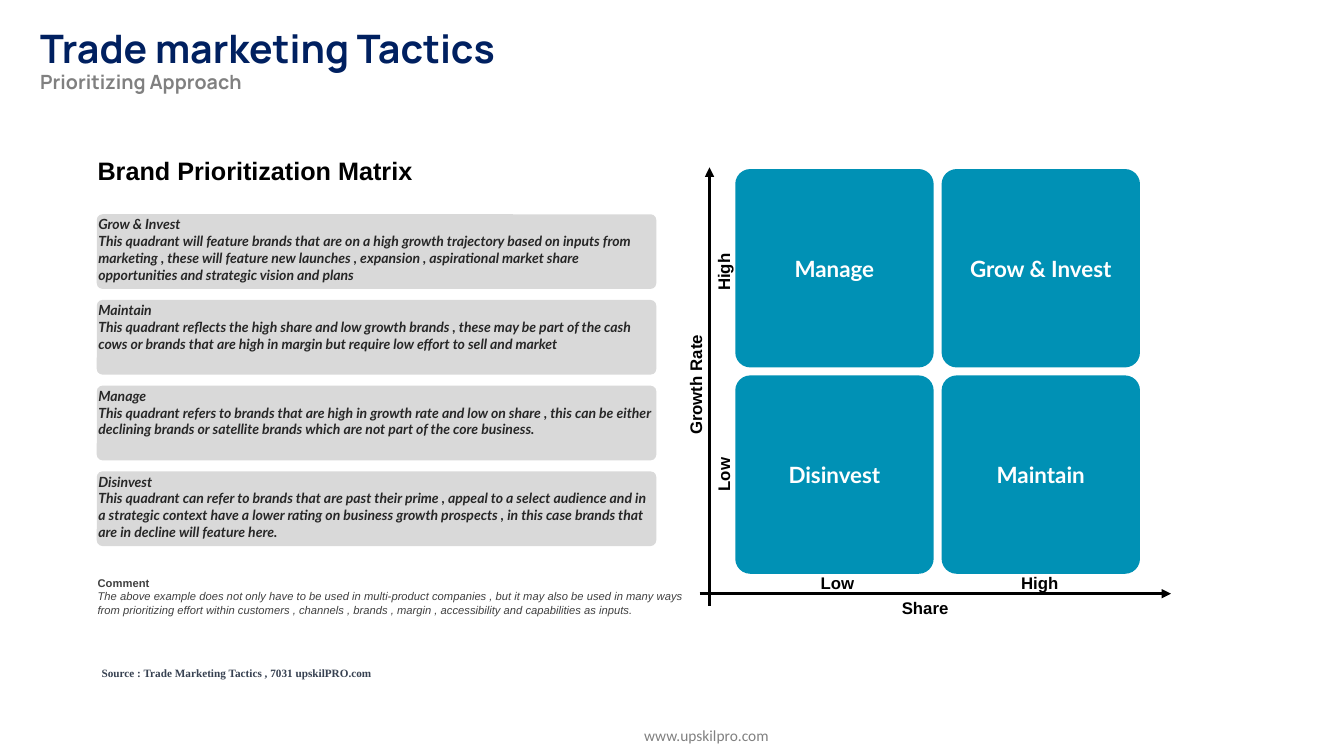
"""Build the brand prioritization matrix slide."""
from lxml import etree
from pptx import Presentation
from pptx.dml.color import RGBColor
from pptx.enum.shapes import MSO_CONNECTOR, MSO_SHAPE
from pptx.enum.text import MSO_ANCHOR, PP_ALIGN
from pptx.oxml.ns import qn
from pptx.util import Cm, Pt

ROUNDED = MSO_SHAPE.ROUNDED_RECTANGLE
STRAIGHT = MSO_CONNECTOR.STRAIGHT
LEFT, CENTER = PP_ALIGN.LEFT, PP_ALIGN.CENTER
TOP, MIDDLE = MSO_ANCHOR.TOP, MSO_ANCHOR.MIDDLE

QUADRANTS = [
    ("Grow & Invest", "This quadrant will feature brands that are on a high growth trajectory "
     "based on inputs from marketing , these will feature new launches , expansion , "
     "aspirational market share opportunities and strategic vision and plans"),
    ("Maintain", "This quadrant reflects the high share and low growth brands , these may be "
     "part of the cash cows or brands that are high in margin but require low effort to sell "
     "and market"),
    ("Manage", "This quadrant refers to brands that are high in growth rate and low on share , "
     "this can be either declining brands or satellite brands which are not part of the core "
     "business."),
    ("Disinvest", "This quadrant can refer to brands that are past their prime , appeal to a "
     "select audience and in a strategic context have a lower rating on business growth "
     "prospects , in this case brands that are in decline will feature here."),
]
MATRIX = [["Manage", "Grow & Invest"], ["Disinvest", "Maintain"]]
COMMENT = ("The above example does not only have to be used in multi-product companies , but it "
           "may also be used in many ways from prioritizing effort within customers , channels , "
           "brands , margin , accessibility and capabilities as inputs.")


def color(value):
    return RGBColor.from_string(value)


def add_text(frame, text, font="Arial", size=12, fill="000000", bold=True, italic=False,
             align=LEFT, line_spacing=None, space_after=None):
    paragraph = frame.paragraphs[0]
    if paragraph.runs:
        paragraph = frame.add_paragraph()
    paragraph.alignment = align
    if line_spacing:
        paragraph.line_spacing = line_spacing
    if space_after:
        paragraph.space_after = Pt(space_after)
    run = paragraph.add_run()
    run.text = text
    run.font.name = font
    run.font.size = Pt(size)
    run.font.bold = bold
    run.font.italic = italic
    run.font.color.rgb = color(fill)
    return paragraph


class MatrixSlide:
    card_fill = "D9D9D9"
    tile_fill = "0091B5"
    axis_color = "000000"
    corner = 0.076

    def __init__(self, presentation):
        self.slide = presentation.slides.add_slide(presentation.slide_layouts[6])

    def text_box(self, left, top, width, height, anchor=TOP, rotation=0):
        shape = self.slide.shapes.add_textbox(Cm(left), Cm(top), Cm(width), Cm(height))
        shape.rotation = rotation
        shape.text_frame.word_wrap = True
        shape.text_frame.vertical_anchor = anchor
        return shape.text_frame

    def panel(self, left, top, width, height, fill, anchor):
        shape = self.slide.shapes.add_shape(ROUNDED, Cm(left), Cm(top), Cm(width), Cm(height))
        shape.adjustments[0] = self.corner
        shape.shadow.inherit = False
        shape.fill.solid()
        shape.fill.fore_color.rgb = color(fill)
        shape.line.fill.background()
        frame = shape.text_frame
        frame.word_wrap = True
        frame.vertical_anchor = anchor
        frame.margin_left = frame.margin_right = frame.margin_top = frame.margin_bottom = 0
        return frame

    def card(self, left, top, name, description):
        frame = self.panel(left, top, 14.1, 1.88, self.card_fill, TOP)
        for text in (name, description):
            add_text(frame, text, font="Lato", size=10, fill="272727", italic=True)

    def tile(self, left, top, name):
        frame = self.panel(left, top, 5, 5, self.tile_fill, MIDDLE)
        add_text(frame, name, font="Lato", size=16, fill="FFFFFF", align=CENTER)

    def axis(self, start_x, start_y, end_x, end_y):
        connector = self.slide.shapes.add_connector(
            STRAIGHT, Cm(start_x), Cm(start_y), Cm(end_x), Cm(end_y))
        connector.line.color.rgb = color(self.axis_color)
        connector.line.width = Pt(2.25)
        etree.SubElement(connector.line._get_or_add_ln(), qn("a:tailEnd"), type="triangle")
        etree.SubElement(connector._element.spPr, qn("a:effectLst"))

    def axis_label(self, text, left, top, width, rotation=0):
        frame = self.text_box(left, top, width, 0.76, rotation=rotation)
        add_text(frame, text, align=CENTER)


def main():
    presentation = Presentation()
    presentation.slide_width = Cm(33.87)
    presentation.slide_height = Cm(19.05)
    matrix = MatrixSlide(presentation)

    title = matrix.text_box(0.76, 0.63, 16.94, 1.88)
    add_text(title, "Trade marketing Tactics", font="Manrope", size=28, fill="002060",
             line_spacing=0.9)
    add_text(title, "Prioritizing Approach", font="Manrope", size=14, fill="808080",
             line_spacing=0.9)
    footer = matrix.text_box(12.09, 18.03, 11.43, 1.02, anchor=MIDDLE)
    add_text(footer, "www.upskilpro.com", font="Calibri", size=11, fill="808080", bold=False,
             align=CENTER, space_after=6)

    heading = matrix.text_box(2.21, 3.78, 9.3, 1.02)
    add_text(heading, "Brand Prioritization Matrix", size=18)
    for index, (name, description) in enumerate(QUADRANTS):
        matrix.card(2.44, 5.4 + 2.16 * index, name, description)

    for row, names in enumerate(MATRIX):
        for column, name in enumerate(names):
            matrix.tile(18.53 + 5.2 * column, 4.26 + 5.2 * row, name)

    matrix.axis(17.88, 15.27, 17.88, 4.22)
    matrix.axis(17.63, 14.96, 29.51, 14.96)
    matrix.axis_label("Growth Rate", 12.47, 9.32, 10.11, rotation=270)
    matrix.axis_label("Share", 18.63, 14.94, 9.37)
    for index, level in enumerate(["Low", "High"]):
        matrix.axis_label(level, 19.43 + 5.1 * index, 14.32, 3.35)
        matrix.axis_label(level, 16.56, 11.58 - 5.1 * index, 3.35, rotation=270)

    comment = matrix.text_box(2.21, 14.4, 15.39, 1.27)
    add_text(comment, "Comment", size=8, fill="404040")
    add_text(comment, COMMENT, size=8, fill="404040", bold=False, italic=True)
    source = matrix.text_box(2.31, 16.64, 11.81, 0.61)
    add_text(source, "Source : Trade Marketing Tactics , 7031 upskilPRO.com",
             font="Times New Roman", size=8, fill="374151", line_spacing=1.07, space_after=8)

    presentation.save("out.pptx")


if __name__ == "__main__":
    main()
